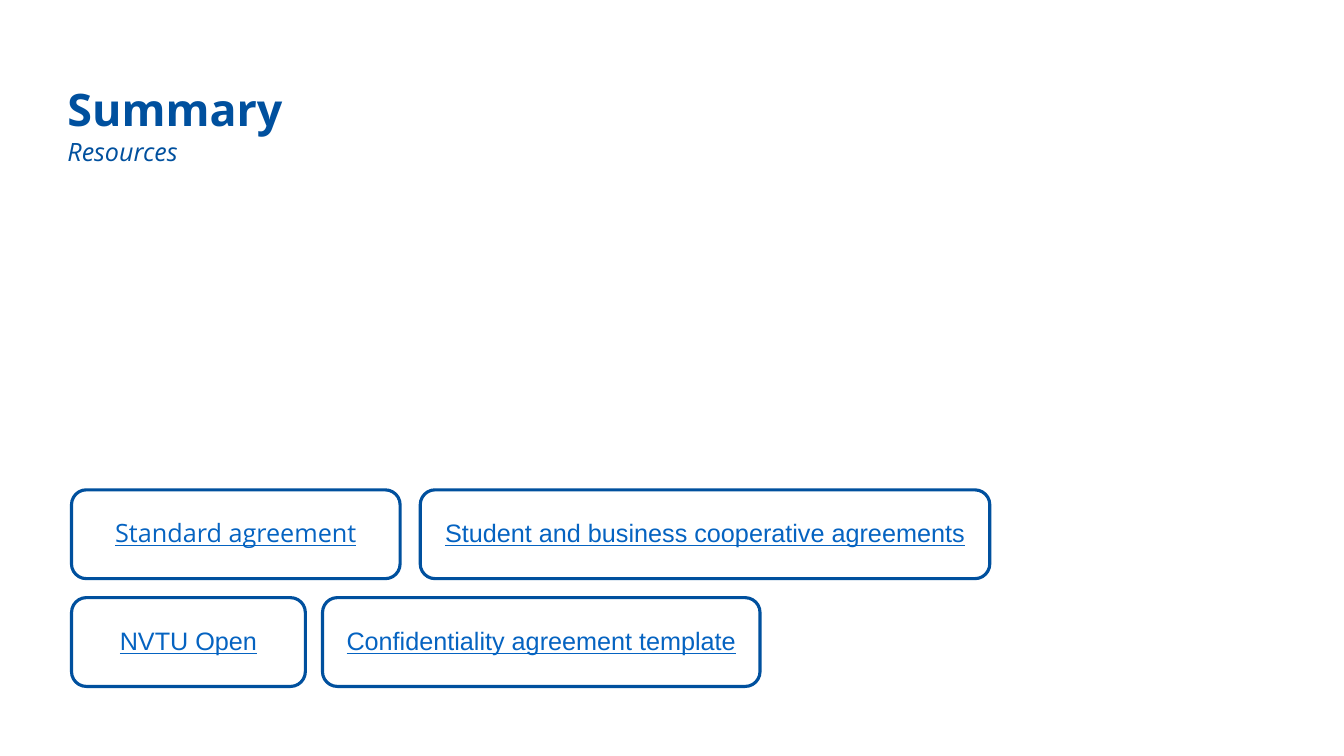
from pptx import Presentation
from pptx.dml.color import RGBColor
from pptx.enum.shapes import MSO_SHAPE
from pptx.enum.text import MSO_ANCHOR, MSO_AUTO_SIZE, PP_ALIGN
from pptx.util import Pt

ROUND = MSO_SHAPE.ROUNDED_RECTANGLE
TOP, MID, LOW = MSO_ANCHOR.TOP, MSO_ANCHOR.MIDDLE, MSO_ANCHOR.BOTTOM
LEFT, MID_X = PP_ALIGN.LEFT, PP_ALIGN.CENTER
FIXED = MSO_AUTO_SIZE.NONE

COLORS = {"navy": "00509E", "link": "0563C1"}
TITLE = "Summary"
SUB = "Resources"
ROWS = [
    (14.4, [("Standard agreement", 234.7, "Open Sans"),
            ("Student and business cooperative agreements", 406.8, "Arial")]),
    (12.3, [("NVTU Open", 167, "Arial"),
            ("Confidentiality agreement template", 312.5, "Arial")]),
]
START, FIRST, HIGH, STEP = 51.1, 349.9, 63.4, 77


def color(name):
    return RGBColor.from_string(COLORS[name])


def place(shape, left, top, width, height):
    shape.left, shape.top = Pt(left), Pt(top)
    shape.width, shape.height = Pt(width), Pt(height)


def write(shape, text, size, face, tint, align, anchor):
    frame = shape.text_frame
    frame.text = text
    frame.word_wrap = True
    frame.auto_size = FIXED
    frame.vertical_anchor = anchor
    line = frame.paragraphs[0]
    line.alignment = align
    font = line.runs[0].font
    font.size, font.name = Pt(size), face
    font.color.rgb = color(tint)
    return line, font


deck = Presentation()
deck.slide_width, deck.slide_height = Pt(960), Pt(540)
slide = deck.slides.add_slide(deck.slide_layouts[0])

title, sub = slide.placeholders
place(title, 41, 49.7, 292.3, 51.1)
line, font = write(title, TITLE, 32, "Open Sans", "navy", LEFT, LOW)
line.line_spacing = 0.9
font.bold = True

place(sub, 41, 96.5, 432.7, 32.4)
line, font = write(sub, SUB, 18, "Open Sans", "navy", LEFT, TOP)
line.line_spacing = 0.9
line.space_before = Pt(10)
font.italic = True

for row, (gap, cards) in enumerate(ROWS):
    left = START
    top = FIRST + row * STEP
    for text, width, face in cards:
        card = slide.shapes.add_shape(
            ROUND, Pt(left), Pt(top), Pt(width), Pt(HIGH))
        card.shadow.inherit = False
        card.fill.background()
        card.line.color.rgb = color("navy")
        card.line.width = Pt(2.25)
        line, font = write(card, text, 18, face, "link", MID_X, MID)
        card.text_frame.margin_bottom = Pt(6)
        font.underline = True
        left += width + gap

deck.save("out.pptx")
